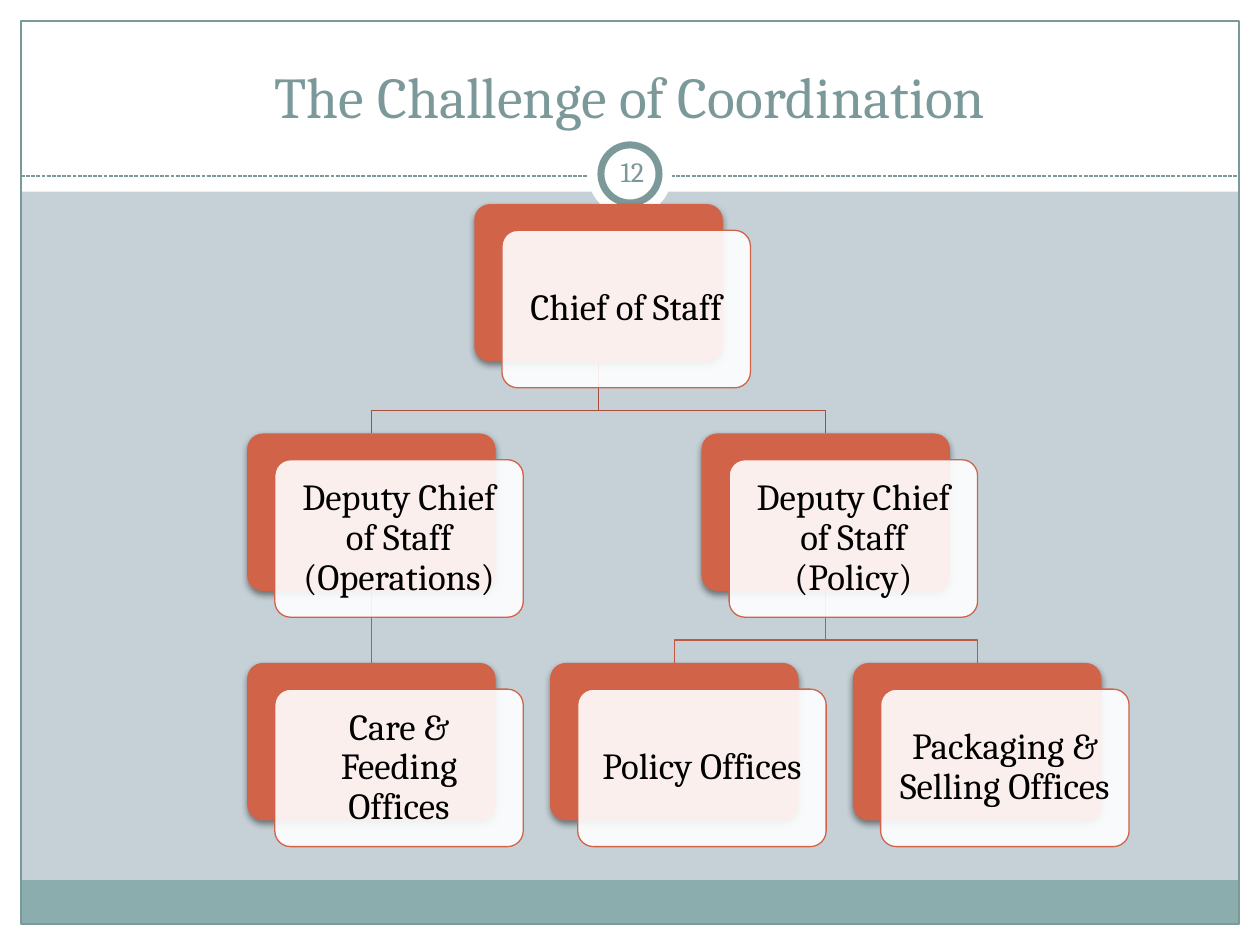
from lxml import etree
from pptx import Presentation
from pptx.dml.color import RGBColor
from pptx.enum import dml, shapes, text
from pptx.oxml import parse_xml
from pptx.oxml.ns import nsdecls, qn
from pptx.util import Pt

WHITE = RGBColor(0xFF, 0xFF, 0xFF)
BLACK = RGBColor(0, 0, 0)
MIST = RGBColor(0xC5, 0xD1, 0xD7)
TEAL = RGBColor(0x8C, 0xAD, 0xAE)
SLATE = RGBColor(0x7C, 0x99, 0x9A)
RUST = RGBColor(0xD1, 0x63, 0x49)
UPPER_LINK = RGBColor(0xA7, 0x4F, 0x3A)
LOWER_LINK = RGBColor(0xBE, 0x5A, 0x42)
FONT = "Cambria"

deck = Presentation()
deck.slide_width, deck.slide_height = Pt(720), Pt(540)
slide = deck.slides.add_slide(deck.slide_layouts[5])
slide.background.fill.solid()
slide.background.fill.fore_color.rgb = MIST


def add_block(kind, left, top, width, height, fill=None, line=None, weight=0.75):
    block = slide.shapes.add_shape(kind, Pt(left), Pt(top), Pt(width), Pt(height))
    block.shadow.inherit = False
    if fill is None:
        block.fill.background()
    else:
        block.fill.solid()
        block.fill.fore_color.rgb = fill
    if line is None:
        block.line.fill.background()
    else:
        block.line.color.rgb = line
        block.line.width = Pt(weight)
    return block


def write(frame, words, size, color, inset, anchor=text.MSO_ANCHOR.MIDDLE):
    frame.word_wrap = True
    frame.auto_size = text.MSO_AUTO_SIZE.NONE
    frame.vertical_anchor = anchor
    frame.margin_left = frame.margin_right = Pt(inset)
    frame.margin_top = frame.margin_bottom = Pt(inset)
    frame.text = words
    paragraph = frame.paragraphs[0]
    paragraph.alignment = text.PP_ALIGN.CENTER
    paragraph.font.name = FONT
    paragraph.font.size = Pt(size)
    paragraph.font.color.rgb = color
    return paragraph


RECT, OVAL = shapes.MSO_SHAPE.RECTANGLE, shapes.MSO_SHAPE.OVAL
for left, top, width, height, fill in [
    (0, 528, 720, 12, WHITE),
    (0, 0, 720, 109.5, WHITE),
    (0, 0, 12, 540, WHITE),
    (708, 0, 12, 540, WHITE),
    (12, 503, 696, 25, TEAL),
]:
    add_block(RECT, left, top, width, height, fill)
add_block(RECT, 12, 12, 696, 516, line=SLATE)

divider = slide.shapes.add_connector(
    shapes.MSO_CONNECTOR.STRAIGHT, Pt(12), Pt(100.6), Pt(708), Pt(100.6))
divider.line.color.rgb = SLATE
divider.line.width = Pt(0.75)
divider.line.dash_style = dml.MSO_LINE.SQUARE_DOT
etree.SubElement(divider._element.spPr, qn("a:effectLst"))

add_block(OVAL, 336, 75.6, 48, 48, WHITE)
add_block(OVAL, 343.4, 82.8, 33.2, 33.2, WHITE, SLATE, 4)

title = slide.shapes.title
title.left, title.top, title.width, title.height = Pt(24), Pt(18), Pt(672), Pt(60)
write(title.text_frame, "The Challenge of Coordination", 33, SLATE, 3.6,
      text.MSO_ANCHOR.BOTTOM)
slide.shapes._spTree.append(title._element)

CARD_W, CARD_H = 142, 90
FIRST_LEFT, COLUMN_STEP = 141.2, 173.1
FIRST_TOP, ROW_STEP = 116.6, 131.1
BEND = 28

# column, row, parent index
staff = [
    ("Chief of Staff", 0.75, 0, None),
    ("Deputy Chief of Staff (Operations)", 0, 1, 0),
    ("Care & Feeding Offices", 0, 2, 1),
    ("Deputy Chief of Staff (Policy)", 1.5, 1, 0),
    ("Policy Offices", 1, 2, 3),
    ("Packaging & Selling Offices", 2, 2, 3),
]
corners = [(FIRST_LEFT + column * COLUMN_STEP, FIRST_TOP + row * ROW_STEP)
           for _, column, row, _ in staff]

for (_, _, row, boss), (left, top) in reversed(list(zip(staff, corners))):
    if boss is None:
        continue
    child_x, boss_x = Pt(left + CARD_W / 2), Pt(corners[boss][0] + CARD_W / 2)
    boss_y = corners[boss][1] + CARD_H
    if child_x == boss_x:
        link = slide.shapes.add_connector(
            shapes.MSO_CONNECTOR.STRAIGHT, boss_x, Pt(boss_y), child_x, Pt(top))
        etree.SubElement(link._element.spPr, qn("a:effectLst"))
    else:
        route = slide.shapes.build_freeform(boss_x, Pt(boss_y))
        route.add_line_segments([(boss_x, Pt(boss_y + BEND)), (child_x, Pt(boss_y + BEND)),
                                 (child_x, Pt(top))], close=False)
        link = route.convert_to_shape()
        link.fill.background()
        link.shadow.inherit = False
    link.line.color.rgb = UPPER_LINK if row == 1 else LOWER_LINK
    link.line.width = Pt(0.75)

ROUNDED = shapes.MSO_SHAPE.ROUNDED_RECTANGLE
for (role, *_), (left, top) in zip(staff, corners):
    backing = add_block(ROUNDED, left, top, CARD_W, CARD_H, RUST)
    backing.adjustments[0] = 0.1
    backing._element.spPr.find(qn("a:effectLst")).append(parse_xml(
        f'<a:outerShdw {nsdecls("a")} blurRad="{Pt(4)}" dist="{Pt(2)}" dir="5400000" '
        'rotWithShape="0"><a:srgbClr val="000000"><a:alpha val="45000"/></a:srgbClr>'
        '</a:outerShdw>'))
    card = add_block(ROUNDED, left + 15.8, top + 15, CARD_W, CARD_H, WHITE, RUST)
    card.adjustments[0] = 0.1
    tint = card._element.spPr.find(qn("a:solidFill")).find(qn("a:srgbClr"))
    etree.SubElement(tint, qn("a:alpha"), val="90000")
    write(card.text_frame, role, 21, BLACK, 6.3).line_spacing = 0.9

page_number = slide.shapes.add_textbox(Pt(343.4), Pt(80.6), Pt(36), Pt(34.6))
write(page_number.text_frame, "12", 16, SLATE, 3.6)

deck.save("out.pptx")
